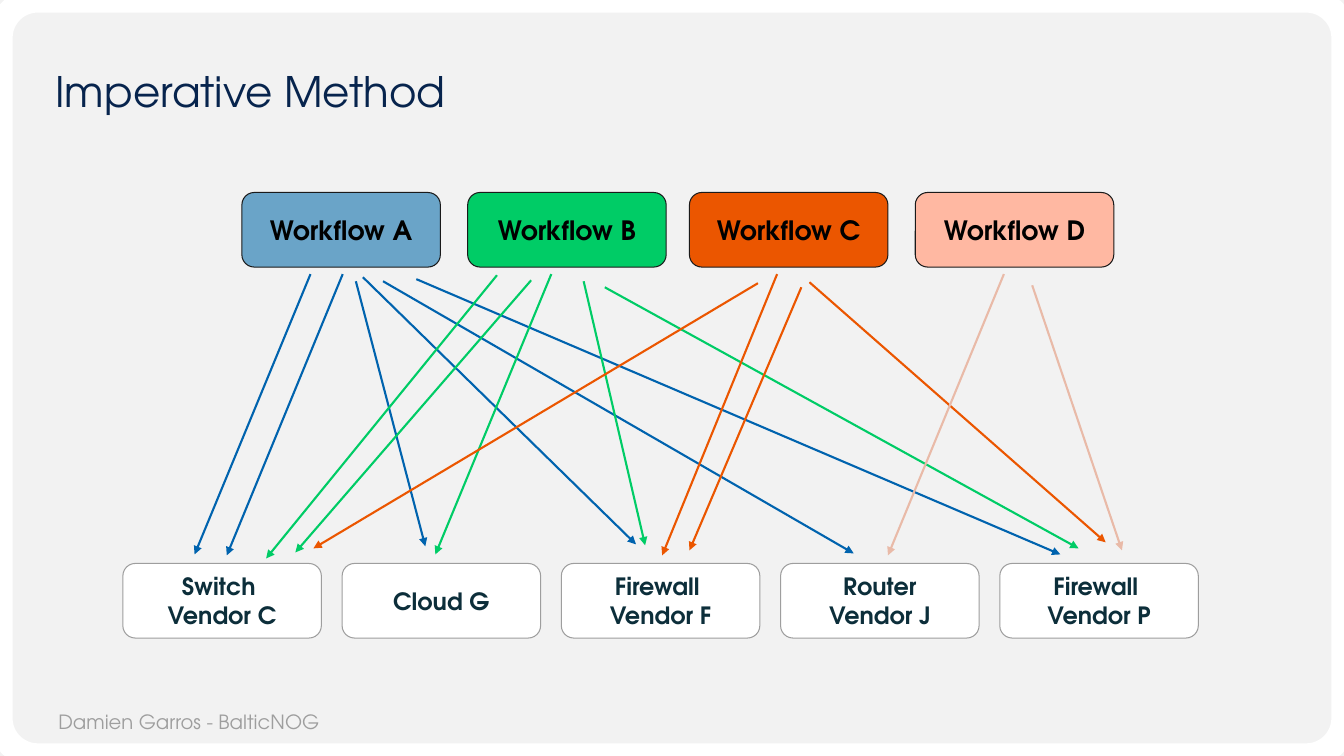
"""Builds the slide "Imperative Method": workflows wired to devices by arrows."""
from dataclasses import dataclass

from lxml import etree
from pptx import Presentation
from pptx.dml.color import RGBColor
from pptx.enum.shapes import MSO_CONNECTOR, MSO_SHAPE
from pptx.enum.text import MSO_ANCHOR, PP_ALIGN
from pptx.oxml.ns import qn
from pptx.util import Pt

ROUNDED = MSO_SHAPE.ROUNDED_RECTANGLE
STRAIGHT = MSO_CONNECTOR.STRAIGHT
LEFT, CENTER = PP_ALIGN.LEFT, PP_ALIGN.CENTER
TOP, MIDDLE = MSO_ANCHOR.TOP, MSO_ANCHOR.MIDDLE


@dataclass(frozen=True)
class Theme:
    """Colours, font and type sizes of the slide."""
    font: str = "TeX Gyre Adventor"
    background: str = "F2F2F2"
    white: str = "FFFFFF"
    grey: str = "9E9E9E"
    title: str = "07244D"
    device_text: str = "0C2E3A"
    workflow_text: str = "000000"
    workflow_edge: str = "1A1A1A"
    title_size: int = 30
    workflow_size: int = 19
    device_size: int = 17
    footer_size: int = 14


THEME = Theme()
SLIDE_SIZE = (960, 540)
BOX_SIZE = (141.8, 53.3)
WORKFLOW_TOP = 137.5
DEVICE_LEFT, DEVICE_TOP, DEVICE_PITCH = 87.8, 402.5, 156.6

DEVICES = ["Switch \nVendor C", "Cloud G", "Firewall \nVendor F",
           "Router\nVendor J", "Firewall \nVendor P"]

# Name, left edge, fill, arrow colour, arrows as (start x, start y, end x, end y)
WORKFLOWS = [
    ("Workflow A", 172.8, "6AA4C8", "0063AE", [
        (221.8, 195.8, 139, 396), (244.8, 195.8, 162, 396.7),
        (254.2, 200.9, 303.8, 390.2), (259.2, 198, 454.3, 388.8),
        (273.6, 200.9, 609.8, 395.3), (297.4, 199.4, 757.4, 396)]),
    ("Workflow B", 334.1, "00CC66", "00CC66", [
        (355, 196.6, 190.1, 398.9), (379.4, 200.2, 211, 394.6),
        (393.8, 195.8, 311, 396), (416.9, 200.9, 460.8, 389.5),
        (432, 205.2, 770.4, 391.7)]),
    ("Workflow C", 492.5, "EB5600", "EB5600", [
        (541.4, 202.3, 223.9, 391.7), (555.1, 195.8, 473, 396.7),
        (572.4, 205.2, 492.5, 393.1), (578.2, 201.6, 789.8, 387.4)]),
    ("Workflow D", 653.8, "FFB8A2", "E9BAA8", [
        (717.1, 195.8, 634.3, 396.7), (737.3, 203.8, 801.4, 393.1)]),
]


def apply_format(target, values):
    """Set every attribute named in values on target."""
    for name, value in values.items():
        setattr(target, name, value)


def set_line(line, color, width):
    """Give a line its colour and width."""
    line.color.rgb = RGBColor.from_string(color)
    line.width = Pt(width)


def write_text(shape, text, size, color, bold=False, align=LEFT, anchor=TOP, spacing=None):
    """Fill a shape with one formatted paragraph."""
    frame = shape.text_frame
    inset = Pt(7.2)
    apply_format(frame, {
        "word_wrap": True, "vertical_anchor": anchor, "margin_left": inset,
        "margin_right": inset, "margin_top": inset, "margin_bottom": inset})
    paragraph = frame.paragraphs[0]
    apply_format(paragraph, {"text": text, "alignment": align, "line_spacing": spacing})
    for run in paragraph.runs:
        apply_format(run.font, {"name": THEME.font, "size": Pt(size), "bold": bold})
        run.font.color.rgb = RGBColor.from_string(color)


def add_label(slide, bounds, text, size, color, spacing=None):
    """Add a plain text box."""
    label = slide.shapes.add_textbox(*map(Pt, bounds))
    write_text(label, text, size, color, spacing=spacing)


def add_rounded(slide, bounds, corner, edge, edge_width, fill=None):
    """Add a rounded rectangle, hollow when no fill is given."""
    rounded = slide.shapes.add_shape(ROUNDED, *map(Pt, bounds))
    rounded.shadow.inherit = False
    rounded.adjustments[0] = corner
    set_line(rounded.line, edge, edge_width)
    if fill:
        rounded.fill.solid()
        rounded.fill.fore_color.rgb = RGBColor.from_string(fill)
    else:
        rounded.fill.background()
    return rounded


def add_node(slide, left, top, text, fill, edge, size, color):
    """Add a labelled workflow or device box."""
    node = add_rounded(slide, (left, top, *BOX_SIZE), 0.167, edge, 0.75, fill)
    write_text(node, text, size, color, bold=True, align=CENTER, anchor=MIDDLE)


def add_arrow(slide, ends, color):
    """Add a straight line with an arrowhead at its end."""
    arrow = slide.shapes.add_connector(STRAIGHT, *map(Pt, ends))
    set_line(arrow.line, color, 1.5)
    properties = arrow.element.spPr
    etree.SubElement(properties.find(qn("a:ln")), qn("a:tailEnd"), type="triangle")
    etree.SubElement(properties, qn("a:effectLst"))


def main():
    """Build and save the slide."""
    presentation = Presentation()
    width, height = map(Pt, SLIDE_SIZE)
    apply_format(presentation, {"slide_width": width, "slide_height": height})
    slide = presentation.slides.add_slide(presentation.slide_layouts[6])
    slide.background.fill.solid()
    slide.background.fill.fore_color.rgb = RGBColor.from_string(THEME.background)

    add_rounded(slide, (0, 0, *SLIDE_SIZE), 0.05, THEME.white, 18)
    add_label(slide, (34.6, 499.7, 465.8, 31.7), "Damien Garros - BalticNOG",
              THEME.footer_size, THEME.grey)
    add_label(slide, (32.4, 46.8, 894.2, 59.8), "Imperative Method",
              THEME.title_size, THEME.title, spacing=0.8)

    for index, device in enumerate(DEVICES):
        add_node(slide, DEVICE_LEFT + index * DEVICE_PITCH, DEVICE_TOP, device,
                 THEME.white, THEME.grey, THEME.device_size, THEME.device_text)
    for workflow, left, fill, arrow_color, arrows in WORKFLOWS:
        add_node(slide, left, WORKFLOW_TOP, workflow, fill, THEME.workflow_edge,
                 THEME.workflow_size, THEME.workflow_text)
        for ends in arrows:
            add_arrow(slide, ends, arrow_color)

    presentation.save("out.pptx")


if __name__ == "__main__":
    main()
